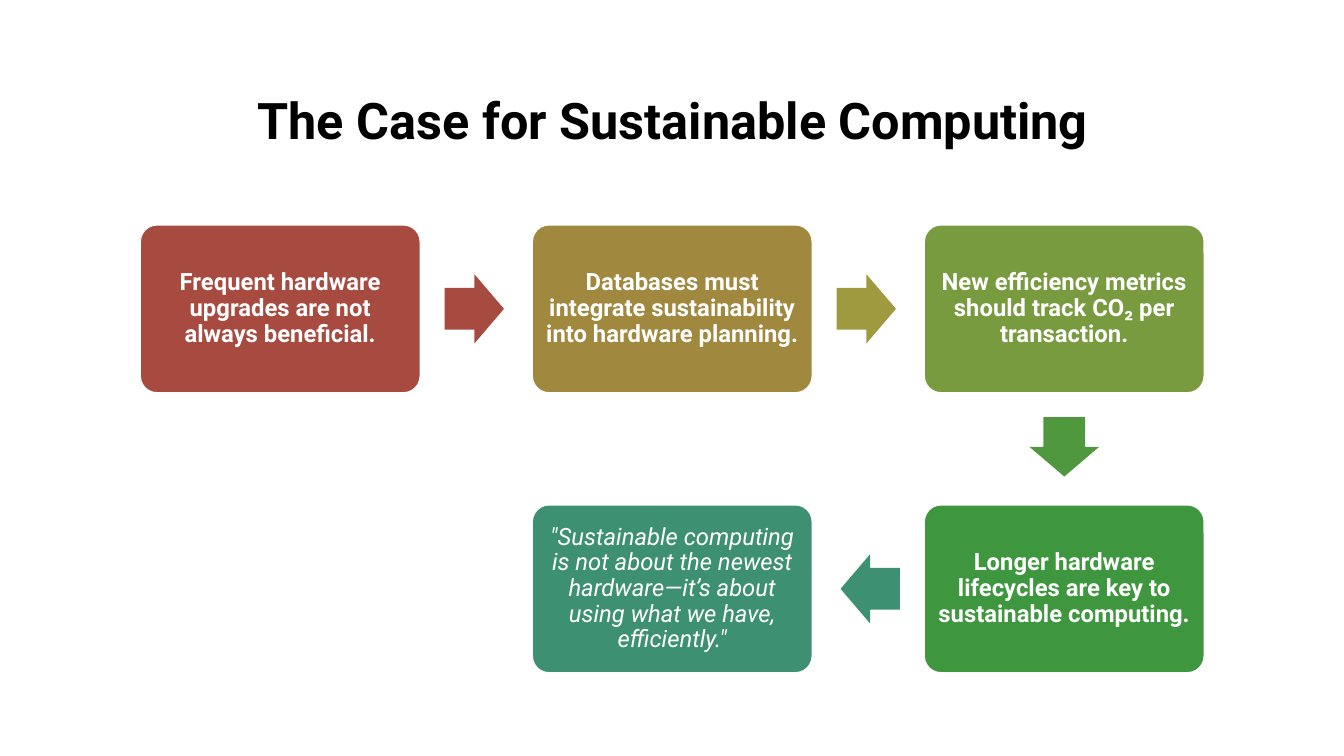
import pptx
import pptx.util
import pptx.dml.color
import pptx.enum.shapes
import pptx.enum.text

Pt = pptx.util.Pt
SHAPES = pptx.enum.shapes.MSO_SHAPE
FONT = "Roboto"
COLORS = {
    "black": "000000",
    "white": "FFFFFF",
    "red": "A74B40",
    "ochre": "A1883F",
    "olive": "9F9A3F",
    "lime": "799B3F",
    "leaf": "50983E",
    "green": "3E963E",
    "teal": "3D9072",
}
STEP_WIDTH, STEP_HEIGHT = 200, 120
ARROW_WIDTH, ARROW_HEIGHT = 42.4, 49.7
ARROW_DISTANCE = 38.6
DIRECTIONS = {0: (1, 0), 90: (0, 1), 180: (-1, 0)}

STEPS = [
    (0, 0, "red", "Frequent hardware upgrades are not always beneficial.", (0, "red")),
    (1, 0, "ochre", "Databases must integrate sustainability into hardware planning.", (0, "olive")),
    (2, 0, "lime", "New efficiency metrics should track CO₂ per transaction.", (90, "leaf")),
    (2, 1, "green", "Longer hardware lifecycles are key to sustainable computing.", (180, "teal")),
    (1, 1, "teal", "\"Sustainable computing is not about the newest hardware—it’s about "
                   "using what we have, efficiently.\"", None),
]


def rgb(name):
    return pptx.dml.color.RGBColor.from_string(COLORS[name])


def write_text(shape, text, size, color, bold=True, italic=False):
    frame = shape.text_frame
    frame.text = text
    frame.word_wrap = True
    frame.auto_size = pptx.enum.text.MSO_AUTO_SIZE.NONE
    frame.vertical_anchor = pptx.enum.text.MSO_ANCHOR.MIDDLE
    paragraph = frame.paragraphs[0]
    paragraph.alignment = pptx.enum.text.PP_ALIGN.CENTER
    paragraph.line_spacing = 0.9
    font = paragraph.runs[0].font
    font.name, font.size, font.bold, font.italic = FONT, Pt(size), bold, italic
    font.color.rgb = rgb(color)


def add_filled_shape(slide, kind, left, top, width, height, color):
    shape = slide.shapes.add_shape(kind, Pt(left), Pt(top), Pt(width), Pt(height))
    shape.shadow.inherit = False
    shape.fill.solid()
    shape.fill.fore_color.rgb = rgb(color)
    shape.line.fill.background()
    return shape


def add_title(slide, left, top, width, height):
    title = slide.shapes.title
    title.left, title.top, title.width, title.height = Pt(left), Pt(top), Pt(width), Pt(height)
    write_text(title, "The Case for Sustainable Computing", 36, "black")


def add_step(slide, left, top, color, text, is_quote):
    step = add_filled_shape(slide, SHAPES.ROUNDED_RECTANGLE, left, top, STEP_WIDTH, STEP_HEIGHT, color)
    step.adjustments[0] = 0.1
    step.line.color.rgb = rgb("white")
    step.line.width = Pt(1)
    frame = step.text_frame
    frame.margin_left = frame.margin_right = frame.margin_top = frame.margin_bottom = Pt(5)
    write_text(step, text, 17, "white", bold=not is_quote, italic=is_quote)


def add_arrow(slide, step_left, step_top, rotation, color):
    across, down = DIRECTIONS[rotation]
    center_x = step_left + STEP_WIDTH / 2 + across * (STEP_WIDTH / 2 + ARROW_DISTANCE)
    center_y = step_top + STEP_HEIGHT / 2 + down * (STEP_HEIGHT / 2 + ARROW_DISTANCE)
    arrow = add_filled_shape(slide, SHAPES.RIGHT_ARROW, center_x - ARROW_WIDTH / 2,
                             center_y - ARROW_HEIGHT / 2, ARROW_WIDTH, ARROW_HEIGHT, color)
    arrow.adjustments[0] = 0.6
    arrow.adjustments[1] = 0.5
    arrow.rotation = rotation


def add_process(slide, left, top, width, height):
    column_pitch = (width - STEP_WIDTH) / 2
    row_pitch = height - STEP_HEIGHT
    for column, row, color, text, arrow in STEPS:
        step_left = left + column * column_pitch
        step_top = top + row * row_pitch
        add_step(slide, step_left, step_top, color, text, is_quote=arrow is None)
        if arrow:
            add_arrow(slide, step_left, step_top, *arrow)


def main():
    presentation = pptx.Presentation()
    presentation.slide_width, presentation.slide_height = Pt(960), Pt(540)
    slide = presentation.slides.add_slide(presentation.slide_layouts[5])
    add_title(slide, 120, 43.2, 721.4, 89.3)
    add_process(slide, 100.2, 160.6, 760, 320)
    presentation.save("out.pptx")


if __name__ == "__main__":
    main()
